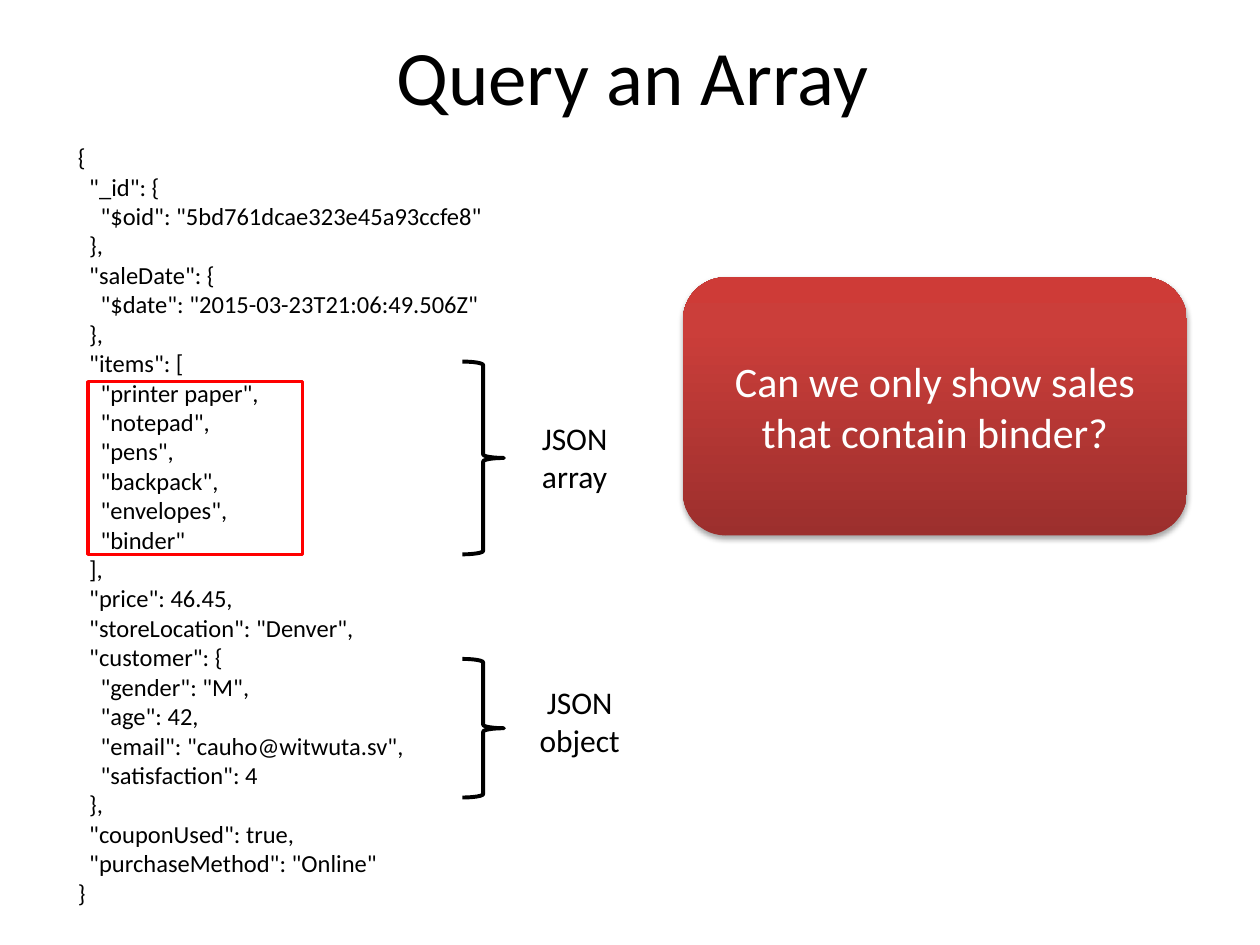
import copy

import lxml.etree
import pptx
import pptx.dml.color
import pptx.enum.shapes
import pptx.enum.text
import pptx.oxml
import pptx.oxml.ns
import pptx.util

Inches = pptx.util.Inches
Pt = pptx.util.Pt
RGBColor = pptx.dml.color.RGBColor
MSO_SHAPE = pptx.enum.shapes.MSO_SHAPE
PP_ALIGN = pptx.enum.text.PP_ALIGN
MSO_ANCHOR = pptx.enum.text.MSO_ANCHOR

BLACK = RGBColor(0x00, 0x00, 0x00)
WHITE = RGBColor(0xFF, 0xFF, 0xFF)
RED = RGBColor(0xFF, 0x00, 0x00)
GRADIENT = [
    (0, RGBColor(0x9C, 0x2F, 0x2D)),
    (0.8, RGBColor(0xCB, 0x3E, 0x3A)),
    (1, RGBColor(0xCE, 0x3B, 0x37)),
]
FONT = "Calibri"
INDENT = Inches(0.09)

SALE = """{
"_id": {
"$oid": "5bd761dcae323e45a93ccfe8"
},
"saleDate": {
"$date": "2015-03-23T21:06:49.506Z"
},
"items": [
"printer paper",
"notepad",
"pens",
"backpack",
"envelopes",
"binder"
],
"price": 46.45,
"storeLocation": "Denver",
"customer": {
"gender": "M",
"age": 42,
"email": "cauho@witwuta.sv",
"satisfaction": 4
},
"couponUsed": true,
"purchaseMethod": "Online"
}"""


def write(sp, text, size, color=BLACK, align=PP_ALIGN.CENTER, anchor=MSO_ANCHOR.MIDDLE):
    tf = sp.text_frame
    tf.word_wrap = True
    tf.vertical_anchor = anchor
    tf.text = text
    for p in tf.paragraphs:
        p.alignment = align
        for r in p.runs:
            r.font.name = FONT
            r.font.size = Pt(size)
            r.font.color.rgb = color


def add_outline(kind, left, top, width, height, color, weight):
    sp = s.shapes.add_shape(kind, Inches(left), Inches(top), Inches(width), Inches(height))
    sp.shadow.inherit = False
    sp.fill.background()
    sp.line.color.rgb = color
    sp.line.width = Pt(weight)


prs = pptx.Presentation()
prs.slide_width = Inches(10)
prs.slide_height = Inches(7.5)
s = prs.slides.add_slide(prs.slide_layouts[6])

# Braces with their labels
for text, brace_top, brace_height, left, top in [
    ("JSON object", 5.23, 1.1, 4.14, 5.37),
    ("JSON array", 2.87, 1.53, 4.1, 3.28),
]:
    add_outline(MSO_SHAPE.RIGHT_BRACE, 3.67, brace_top, 0.33, brace_height, BLACK, 2.25)
    label = s.shapes.add_textbox(Inches(left), Inches(top), Inches(0.92), Inches(0.71))
    write(label, text, 18, anchor=MSO_ANCHOR.TOP)

# Question
question = s.shapes.add_shape(
    MSO_SHAPE.ROUNDED_RECTANGLE, Inches(5.42), Inches(2.2), Inches(4), Inches(2.05))
question.line.fill.background()
question.fill.gradient()
question.fill.gradient_angle = 90
stop_list = question.fill._fill._gradFill.gsLst
stop_list.append(copy.deepcopy(stop_list[-1]))
for stop, (position, color) in zip(question.fill.gradient_stops, GRADIENT):
    stop.position = position
    stop.color.rgb = color
question._element.spPr.append(pptx.oxml.parse_xml(
    f'<a:effectLst {pptx.oxml.ns.nsdecls("a")}>'
    '<a:outerShdw blurRad="40000" dist="23000" dir="5400000" rotWithShape="0">'
    '<a:srgbClr val="000000"><a:alpha val="35000"/></a:srgbClr>'
    '</a:outerShdw></a:effectLst>'))
write(question, "Can we only show sales that contain binder?", 24, WHITE)

# Frame around the array items
add_outline(MSO_SHAPE.RECTANGLE, 0.7, 3.03, 1.7, 1.37, RED, 2)

title = s.shapes.add_textbox(Inches(0.52), Inches(-0.03), Inches(9), Inches(1.25))
write(title, "Query an Array", 44)

# JSON document, indented by nesting depth
document = s.shapes.add_textbox(Inches(0.52), Inches(1.08), Inches(5), Inches(6.23))
write(document, SALE, 14, align=PP_ALIGN.LEFT, anchor=MSO_ANCHOR.TOP)
depth = 0
for p in document.text_frame.paragraphs:
    if p.text[0] in "}]":
        depth -= 1
    p._p.get_or_add_pPr().set("marL", str(depth * INDENT))
    if p.text[-1] in "{[":
        depth += 1

prs.save("out.pptx")
